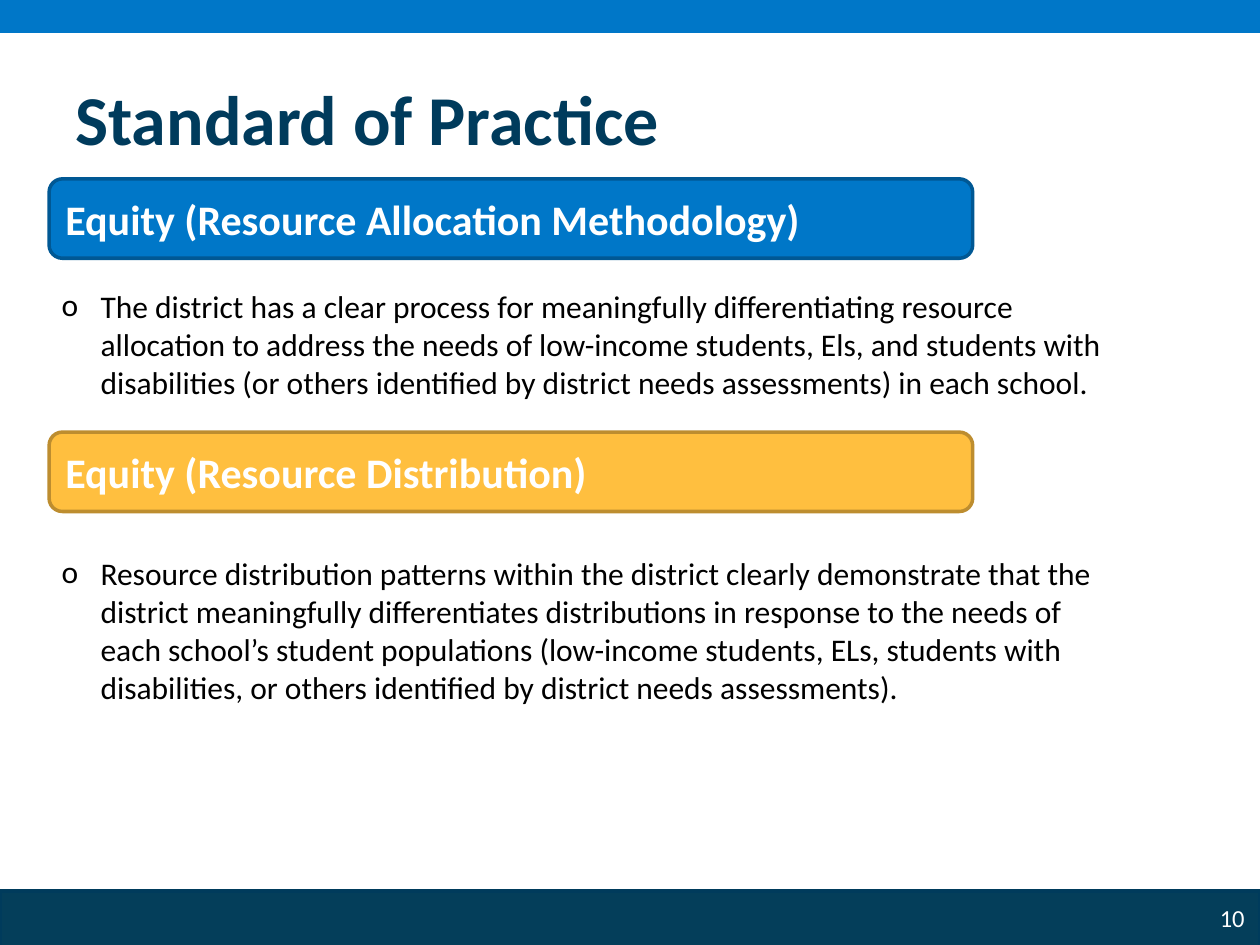
from lxml import etree
from pptx import Presentation
from pptx import util as u
from pptx.dml.color import RGBColor
from pptx.enum import shapes, text
from pptx.oxml.ns import qn

FONT = "Calibri"
NAVY, BLUE, WHITE, BLACK = "003B5C", "0077C8", "FFFFFF", "000000"
LEFT = 0.39
STANDARDS = [
    ("Equity (Resource Allocation Methodology)", 1.42, BLUE, "005894",
     "The district has a clear process for meaningfully differentiating resource "
     "allocation to address the needs of low-income students, Els, and students with "
     "disabilities (or others identified by district needs assessments) in each school.",
     2.23, 1.01),
    ("Equity (Resource Distribution)", 3.43, "FFBF3F", "BD8D2F",
     "Resource distribution patterns within the district clearly demonstrate that the "
     "district meaningfully differentiates distributions in response to the needs of "
     "each school’s student populations (low-income students, ELs, students with "
     "disabilities, or others identified by district needs assessments).",
     4.35, 1.31),
]


def color(value):
    """Turn a hex string into a colour."""
    return RGBColor.from_string(value)


def inches(*lengths):
    """Convert several lengths to inches."""
    return [u.Inches(length) for length in lengths]


def add_panel(page, kind, at, fill, line):
    """Draw a filled, outlined shape without a shadow."""
    panel = page.shapes.add_shape(kind, *inches(*at))
    panel.shadow.inherit = False
    panel.fill.solid()
    panel.fill.fore_color.rgb = color(fill)
    panel.line.color.rgb = color(line)
    panel.line.width = u.Pt(2)
    return panel


def write(box, words, size, ink, bold=False, align=text.PP_ALIGN.LEFT,
          anchor=text.MSO_ANCHOR.MIDDLE):
    """Write one run into a box and return its paragraph."""
    frame = box.text_frame
    frame.word_wrap = True
    frame.vertical_anchor = anchor
    para = frame.paragraphs[0]
    para.alignment = align
    span = para.add_run()
    span.text = words
    span.font.name = FONT
    span.font.size = u.Pt(size)
    span.font.bold = bold
    span.font.color.rgb = color(ink)
    return para


def add_bullet(para, indent):
    """Give a paragraph a hanging round bullet."""
    props = para._p.get_or_add_pPr()
    props.set("marL", str(u.Inches(indent)))
    props.set("indent", str(-u.Inches(indent)))
    etree.SubElement(props, qn("a:buFont")).set("typeface", FONT)
    etree.SubElement(props, qn("a:buChar")).set("char", "o")


def add_bands(page):
    """Draw the top band, the footer band and the page number."""
    rectangle = shapes.MSO_SHAPE.RECTANGLE
    add_panel(page, rectangle, (0, 7.07, 10, 0.45), "043E5A", NAVY)
    add_panel(page, rectangle, (0, 0, 10, 0.25), BLUE, BLUE)
    number = page.shapes.add_textbox(*inches(9.56, 7.07, 0.44, 0.43))
    frame = number.text_frame
    frame.margin_left = frame.margin_right = 0
    frame.margin_top = frame.margin_bottom = 0
    write(number, "10", 14, WHITE, align=text.PP_ALIGN.CENTER)


def add_standard(page, heading, heading_top, fill, line, body, body_top, body_height):
    """Add a heading panel with its bulleted description."""
    panel = add_panel(page, shapes.MSO_SHAPE.ROUNDED_RECTANGLE,
                      (LEFT, heading_top, 7.33, 0.63), fill, line)
    write(panel, heading, 24, WHITE, bold=True)
    box = page.shapes.add_textbox(*inches(LEFT, body_top, 8.5, body_height))
    para = write(box, body, 18, BLACK, anchor=text.MSO_ANCHOR.TOP)
    box.text_frame.auto_size = text.MSO_AUTO_SIZE.SHAPE_TO_FIT_TEXT
    add_bullet(para, 0.31)


def main():
    """Build and save the slide."""
    deck = Presentation()
    deck.slide_width, deck.slide_height = inches(10, 7.5)
    page = deck.slides.add_slide(deck.slide_layouts[6])
    add_bands(page)
    title = page.shapes.add_textbox(*inches(0.5, 0.52, 9, 0.83))
    write(title, "Standard of Practice", 40, NAVY, bold=True)
    for standard in STANDARDS:
        add_standard(page, *standard)
    deck.save("out.pptx")


if __name__ == "__main__":
    main()
